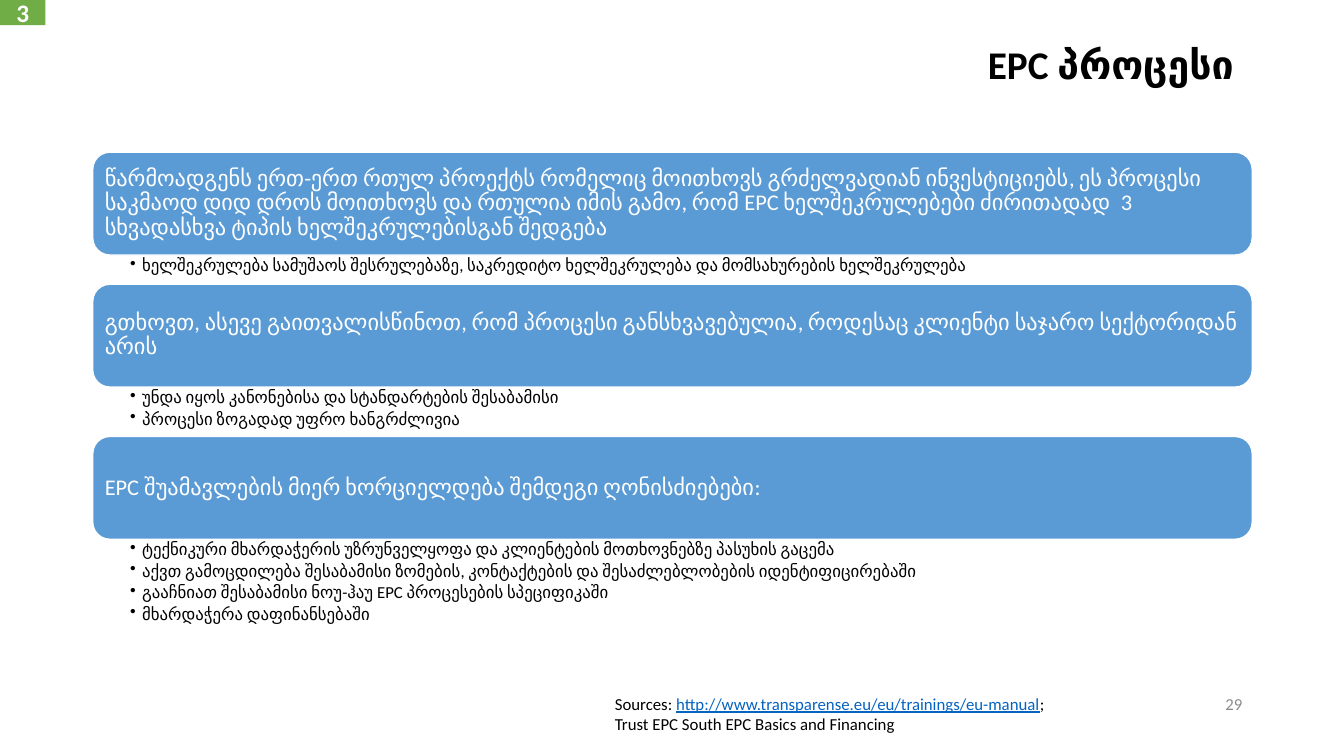
from pptx import Presentation
from pptx.dml.color import RGBColor
from pptx.enum.shapes import MSO_SHAPE as SHAPE
from pptx.enum.text import MSO_ANCHOR as ANCHOR, PP_ALIGN as ALIGN
from pptx.util import Inches, Pt
from lxml import etree

TITLE = "EPC პროცესი "
CHAPTER = "3"
PAGE = "29"
# bar text, height of its list, list items
SECTIONS = [
    ("წარმოადგენს ერთ-ერთ რთულ პროექტს რომელიც მოითხოვს გრძელვადიან ინვესტიციებს, "
     "ეს პროცესი საკმაოდ დიდ დროს მოითხოვს და რთულია იმის გამო, რომ EPC "
     "ხელშეკრულებები ძირითადად  3 სხვადასხვა ტიპის ხელშეკრულებისგან შედგება", 0.29,
     ["ხელშეკრულება სამუშაოს შესრულებაზე, საკრედიტო ხელშეკრულება და "
      "მომსახურების ხელშეკრულება"]),
    ("გთხოვთ, ასევე გაითვალისწინოთ, რომ პროცესი განსხვავებულია, როდესაც კლიენტი "
     "საჯარო სექტორიდან არის", 0.49,
     ["უნდა იყოს კანონებისა და სტანდარტების შესაბამისი",
      "პროცესი ზოგადად უფრო ხანგრძლივია"]),
    ("EPC შუამავლების მიერ ხორციელდება შემდეგი ღონისძიებები:", 0.98,
     ["ტექნიკური მხარდაჭერის უზრუნველყოფა და კლიენტების მოთხოვნებზე პასუხის გაცემა",
      "აქვთ გამოცდილება შესაბამისი ზომების, კონტაქტების და შესაძლებლობების "
      "იდენტიფიცირებაში",
      "გააჩნიათ შესაბამისი ნოუ-ჰაუ EPC პროცესების სპეციფიკაში",
      "მხარდაჭერა დაფინანსებაში"]),
]
SOURCES = [
    [("Sources: ", {}),
     ("http://www.transparense.eu/eu/trainings/eu-manual",
      {"color": "link", "underline": True}),
     (";", {})],
    [("Trust EPC South EPC Basics and Financing", {})],
]

COLORS = {"bar": "5B9BD5", "tag": "70AD47", "white": "FFFFFF",
          "black": "000000", "link": "0563C1", "grey": "8C8C8C"}
FONT = "Calibri"
WIDTH, HEIGHT = 13.33, 7.5
LEFT, BODY_W = 0.92, 11.5
TOP, BAR_H = 1.51, 1.02
BAR_INSETS = (0.07, 0.07, 0.07, 0.07)
LIST_INSETS = (0.37, 0.02, 0.12, 0.02)
BOX_INSETS = (0.1, 0.05, 0.1, 0.05)


def rgb(name):
    return RGBColor.from_string(COLORS[name])


def add_bullet(p, indent=0.12):
    pPr = p._p.get_or_add_pPr()
    pPr.set("marL", str(Inches(indent)))
    pPr.set("indent", str(-Inches(indent)))
    ns = pPr.nsmap["a"]
    etree.SubElement(pPr, f"{{{ns}}}buChar").set("char", "•")


def write(sp, paragraphs, size, color="black", insets=BOX_INSETS,
          anchor=ANCHOR.TOP, bold=False, bullet=False, **layout):
    """Fill a shape with paragraphs, each a string or a list of (text, format) runs."""
    tf = sp.text_frame
    tf.word_wrap = True
    tf.vertical_anchor = anchor
    for side, inset in zip(("left", "top", "right", "bottom"), insets):
        setattr(tf, f"margin_{side}", Inches(inset))
    for i, runs in enumerate(paragraphs):
        p = tf.add_paragraph() if i else tf.paragraphs[0]
        if bullet:
            add_bullet(p)
        for key, value in layout.items():
            setattr(p, key, value)
        for text, fmt in [(runs, {})] if isinstance(runs, str) else runs:
            r = p.add_run()
            r.text = text
            style = {"name": FONT, "size": Pt(size), "bold": bold,
                     "color": color, **fmt}
            r.font.color.rgb = rgb(style.pop("color"))
            for key, value in style.items():
                setattr(r.font, key, value)


def add_block(s, kind, box, fill, line=None):
    sp = s.shapes.add_shape(kind, *map(Inches, box))
    sp.shadow.inherit = False
    sp.fill.solid()
    sp.fill.fore_color.rgb = rgb(fill)
    if line:
        sp.line.color.rgb = rgb(line)
        sp.line.width = Pt(1)
    else:
        sp.line.fill.background()
    return sp


def add_text(s, box, paragraphs, size, **fmt):
    write(s.shapes.add_textbox(*map(Inches, box)), paragraphs, size, **fmt)


def main():
    prs = Presentation()
    prs.slide_width, prs.slide_height = Inches(WIDTH), Inches(HEIGHT)
    s = prs.slides.add_slide(prs.slide_layouts[6])

    y = TOP
    for heading, list_h, items in SECTIONS:
        bar = add_block(s, SHAPE.ROUNDED_RECTANGLE, (LEFT, y, BODY_W, BAR_H),
                        "bar", "white")
        write(bar, [heading], 16, color="white", insets=BAR_INSETS,
              anchor=ANCHOR.MIDDLE, alignment=ALIGN.LEFT, line_spacing=0.9)
        y += BAR_H
        add_text(s, (LEFT, y, BODY_W, list_h), items, 12, insets=LIST_INSETS,
                 bullet=True, line_spacing=0.9, space_after=Pt(2.4))
        y += list_h

    add_text(s, (LEFT, 0.4, BODY_W, 0.57), [TITLE], 28, bold=True,
             alignment=ALIGN.RIGHT, line_spacing=0.9)
    add_text(s, (9.42, 6.78, 3, 0.4), [PAGE], 12, color="grey",
             anchor=ANCHOR.MIDDLE, alignment=ALIGN.RIGHT)
    add_text(s, (6, 6.83, 4.93, 0.5), SOURCES, 12)
    tag = add_block(s, SHAPE.RECTANGLE, (0, 0, 0.45, 0.25), "tag")
    write(tag, [CHAPTER], 18, color="white", anchor=ANCHOR.MIDDLE, bold=True,
          alignment=ALIGN.CENTER)

    prs.save("out.pptx")


if __name__ == "__main__":
    main()
